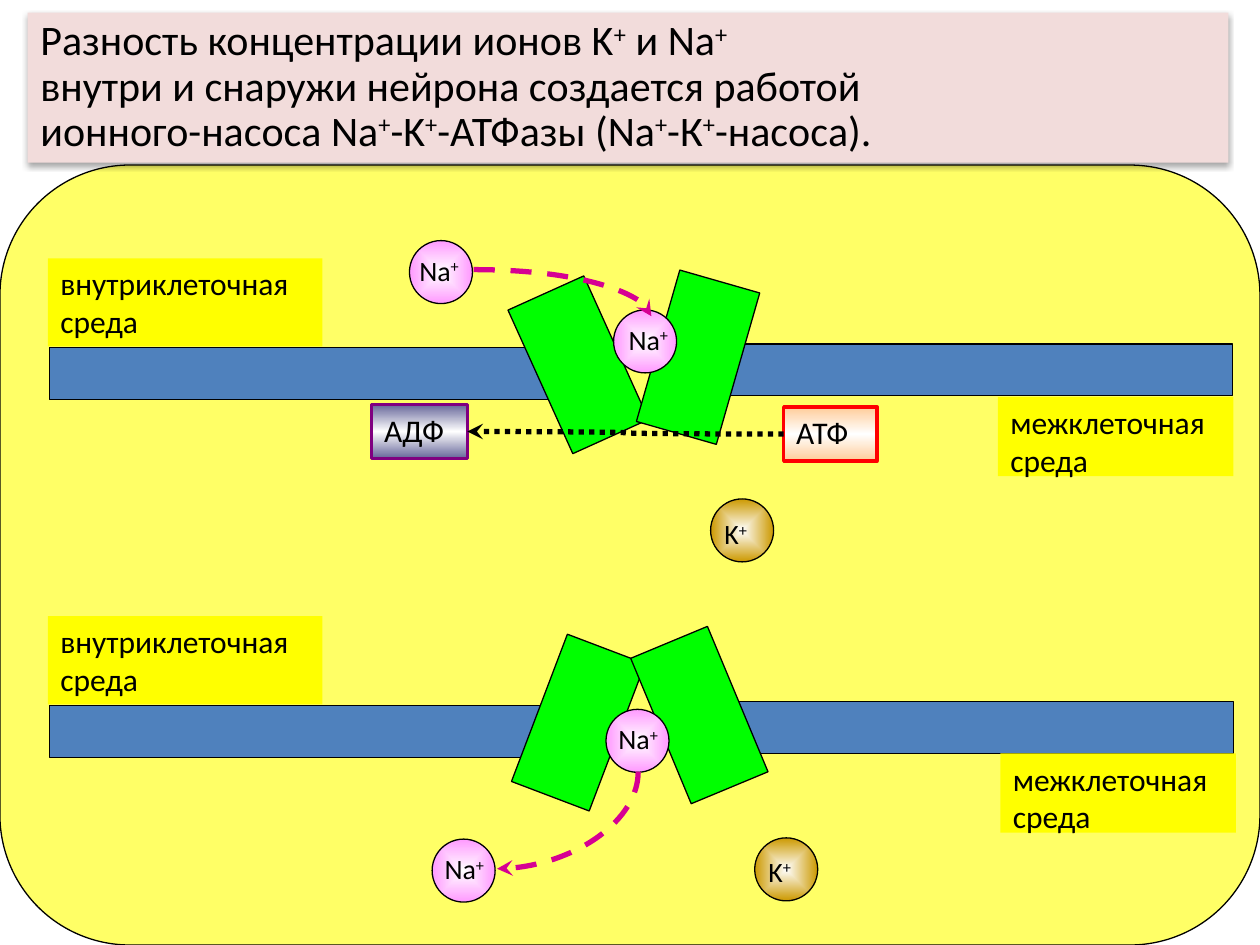
from lxml import etree
from pptx import Presentation
from pptx import util as u
from pptx.dml import color
from pptx.enum import shapes, text
from pptx.oxml import ns

presentation = Presentation()
presentation.slide_width, presentation.slide_height = u.Inches(10), u.Inches(7.5)
unit = presentation.slide_width // 10  # grid of 10 columns by 7.5 rows
slide = presentation.slides.add_slide(presentation.slide_layouts[5])
tree = slide.shapes


def paint(fill, *colours, radial=False):
    """Fill with one colour, or with evenly spaced gradient stops."""
    if len(colours) == 1:
        fill.solid()
        fill.fore_color.rgb = color.RGBColor.from_string(colours[0])
        return
    fill.gradient()
    gradient = fill._xPr.find(ns.qn("a:gradFill"))
    gradient.clear()
    stops = etree.SubElement(gradient, ns.qn("a:gsLst"))
    for number, colour in enumerate(colours):
        stop = etree.SubElement(stops, ns.qn("a:gs"), pos=str(number * 100000 // (len(colours) - 1)))
        etree.SubElement(stop, ns.qn("a:srgbClr"), val=colour)
    if radial:
        shading = etree.SubElement(gradient, ns.qn("a:path"), path="shape")
        etree.SubElement(shading, ns.qn("a:fillToRect"), dict.fromkeys("ltrb", "50000"))
    else:
        etree.SubElement(gradient, ns.qn("a:lin"), ang="5400000", scaled="1")


def write(shape, content, size=18, wrap=False, spacing=1.0, anchor=text.MSO_ANCHOR.TOP):
    """Write lines of text, raising every plus sign."""
    frame = shape.text_frame
    frame.word_wrap, frame.vertical_anchor = wrap, anchor
    frame.auto_size = text.MSO_AUTO_SIZE.NONE
    for number, line in enumerate(content.split("\n")):
        paragraph = frame.add_paragraph() if number else frame.paragraphs[0]
        paragraph.alignment, paragraph.line_spacing = text.PP_ALIGN.LEFT, spacing
        for part in filter(None, line.replace("+", "|+|").split("|")):
            run = paragraph.add_run()
            run.text = part
            run.font.name, run.font.size = "Calibri", u.Pt(size)
            paint(run.font.fill, "000000")
            if part == "+":
                run.font._element.set("baseline", "30000")


# Cell background and membranes
blocks = [(shapes.MSO_SHAPE.ROUNDED_RECTANGLE, (0, 1.31, 10, 6.19), "FFFF66")]
for left, top, width in ((5.69, 2.73, 4.09), (0.39, 2.76, 4.05), (5.7, 5.57, 4.09), (0.39, 5.6, 4.05)):
    blocks.append((shapes.MSO_SHAPE.RECTANGLE, (left, top, width, 0.41), "4F81BD"))
for kind, box, colour in blocks:
    shape = tree.add_shape(kind, *(int(n * unit) for n in box))
    shape.shadow.inherit = False
    paint(shape.fill, colour)
    paint(shape.line.fill, "000000")
    shape.line.width = u.Pt(0.75)

# Title with a soft shadow, lying over the background
title = tree.title
title.left, title.top, title.width, title.height = (int(n * unit) for n in (0.22, 0.1, 9.53, 1.19))
paint(title.fill, "F2DCDB")
write(title, "Разность концентрации ионов K+ и Na+\n"
      "внутри и снаружи нейрона создается работой\n"
      "ионного-насоса Na+-K+-АТФазы (Na+-К+-насоса).",
      size=24, wrap=True, spacing=0.9, anchor=text.MSO_ANCHOR.MIDDLE)
effects = etree.SubElement(title._element.spPr, ns.qn("a:effectLst"))
shadow = etree.SubElement(effects, ns.qn("a:outerShdw"), blurRad=str(u.Pt(3.1)),
                          dist=str(u.Pt(1.8)), dir="5400000", rotWithShape="0")
shade = etree.SubElement(shadow, ns.qn("a:srgbClr"), val="000000")
etree.SubElement(shade, ns.qn("a:alpha"), val="35000")
tree._spTree.append(title._element)

# Pump protein: one smoothed lobe outline, turned four ways
outline = [
    (0.29, 0.06), (0.13, 0.18), (0.07, 0.25), (0.03, 0.36), (0.01, 0.41), (0, 0.56),
    (0.03, 0.86), (0.08, 1.02), (0.12, 1.11), (0.2, 1.19), (0.36, 1.25), (0.51, 1.24),
    (0.57, 1.22), (0.63, 1.15), (0.64, 1.1), (0.63, 0.91), (0.58, 0.82), (0.54, 0.66),
    (0.57, 0.46), (0.66, 0.3), (0.61, 0.09), (0.44, 0.01), (0.35, 0.01), (0.31, 0.04)]
smooth = []
for i, b in enumerate(outline):
    a, c, d = (outline[(i + step) % len(outline)] for step in (-1, 1, 2))
    for t in (0, 0.25, 0.5, 0.75):  # Catmull-Rom spline
        smooth.append(tuple(
            q + t / 2 * (r - p + t * (2 * p - 5 * q + 4 * r - s + t * (3 * q - p - 3 * r + s)))
            for p, q, r, s in zip(a, b, c, d)))
for left, top, angle in ((4.26, 2.27, 335.7), (5.21, 2.21, 196), (4.26, 5.11, 20.8), (5.22, 5.05, 157.4)):
    builder = tree.build_freeform(*smooth[0], scale=unit)
    builder.add_line_segments(smooth[1:], close=True)
    lobe = builder.convert_to_shape()
    lobe.left, lobe.top, lobe.width, lobe.height = (int(n * unit) for n in (left, top, 0.66, 1.25))
    lobe.rotation = angle
    lobe.shadow.inherit = False
    paint(lobe.fill, "00FF00")
    paint(lobe.line.fill, "000000")
    lobe.line.width = u.Pt(0.75)

# Labels of the two media
inside, outside = "внутриклеточная\nсреда", "межклеточная\nсреда"
for content, box in ((inside, (0.38, 2.05, 2.18, 0.7)), (outside, (7.92, 3.15, 1.87, 0.63)),
                     (inside, (0.38, 4.89, 2.18, 0.7)), (outside, (7.94, 5.98, 1.87, 0.63))):
    label = tree.add_shape(shapes.MSO_SHAPE.RECTANGLE, *(int(n * unit) for n in box))
    label.shadow.inherit = False
    paint(label.fill, "FFFF00")
    label.line.fill.background()
    write(label, content)

# Ions: circle position, then label offset
for name, colour, left, top, right, down in (
        ("Na+", "FF99FF", 4.87, 2.46, 0.02, 0.05), ("Na+", "FF99FF", 3.25, 1.91, -0.02, 0.05),
        ("K+", "CC9900", 5.64, 3.96, 0.01, 0.09), ("K+", "CC9900", 5.99, 6.65, 0.01, 0.08),
        ("Na+", "FF99FF", 3.43, 6.66, 0, 0.05), ("Na+", "FF99FF", 4.81, 5.63, 0, 0.05)):
    group = tree.add_group_shape()
    ion = group.shapes.add_shape(shapes.MSO_SHAPE.OVAL, *(int(n * unit) for n in (left, top, 0.5, 0.5)))
    ion.shadow.inherit = False
    paint(ion.fill, "FFFFFF", colour, radial=True)
    paint(ion.line.fill, "000000")
    ion.line.width = u.Pt(0.75)
    width = 0.57 if name == "Na+" else 0.45
    caption = group.shapes.add_textbox(*(int(n * unit) for n in (left + right, top + down, width, 0.37)))
    write(caption, name, size=16)

# ATP and ADP boxes
energy = []
for name, box, colour, border in (("АТФ", (6.22, 3.23, 0.74, 0.43), "FFCC99", "FF0000"),
                                  ("АДФ", (2.95, 3.21, 0.76, 0.43), "666699", "800080")):
    shape = tree.add_shape(shapes.MSO_SHAPE.RECTANGLE, *(int(n * unit) for n in box))
    shape.shadow.inherit = False
    paint(shape.fill, colour, "FFFFFF", colour)
    paint(shape.line.fill, border)
    shape.line.width = u.Pt(2)
    write(shape, name)
    energy.append(shape)

# Arrows: ion entering, ion leaving (a quarter turn), ATP splitting
for ends, preset, turn, colour, dash in (
        ((3.76, 2.14, 5.17, 2.51), "curvedConnector2", 0, "D60093", "dash"),
        ((4.12, 5.95, 4.89, 7.07), "curvedConnector2", 90, "D60093", "dash"),
        ((6.22, 3.45, 3.71, 3.42), "curvedConnector3", 0, "000000", "sysDot")):
    arrow = tree.add_connector(shapes.MSO_CONNECTOR.CURVE, *(int(n * unit) for n in ends))
    properties = arrow._element.spPr
    properties.find(ns.qn("a:prstGeom")).set("prst", preset)
    if turn:
        properties.find(ns.qn("a:xfrm")).set("rot", str(turn * 60000))
    paint(arrow.line.fill, colour)
    arrow.line.width = u.Pt(3)
    line = properties.find(ns.qn("a:ln"))
    etree.SubElement(line, ns.qn("a:prstDash"), val=dash)
    etree.SubElement(line, ns.qn("a:tailEnd"), type="stealth")
    etree.SubElement(properties, ns.qn("a:effectLst"))
arrow.begin_connect(energy[0], 1)
arrow.end_connect(energy[1], 3)

presentation.save("out.pptx")
